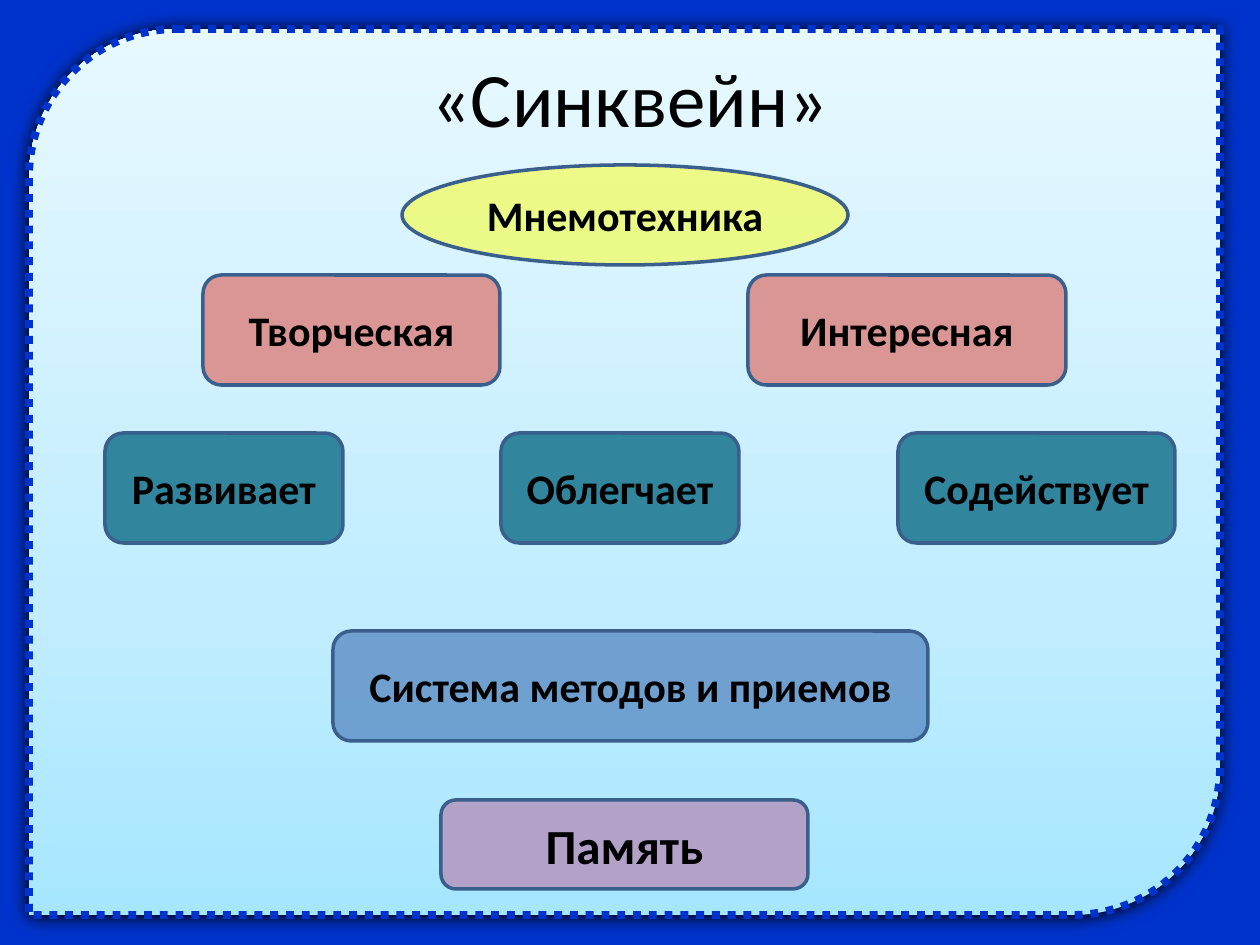
from copy import deepcopy
from dataclasses import dataclass

from lxml.etree import SubElement
from pptx import Presentation
from pptx.dml.color import RGBColor
from pptx.enum.dml import MSO_LINE
from pptx.enum.shapes import MSO_SHAPE
from pptx.enum.text import MSO_ANCHOR, PP_ALIGN
from pptx.oxml.ns import qn
from pptx.util import Emu, Pt

SCALE = 914400 / 126


@dataclass(frozen=True)
class Theme:
    font: str = "Calibri"
    ink: str = "000000"
    edge: str = "3A5F8C"
    back: str = "0033CC"
    glow: tuple = ((0, "A7E6FF"), (0.35, "C1EDFF"), (1, "E7F8FF"))
    topic: str = "FFFF00"
    trait: str = "D99694"
    verb: str = "31859C"
    phrase: str = "4F81BD"
    sum: str = "B3A2C7"
    title: int = 44
    large: int = 28
    body: int = 24


THEME = Theme()


@dataclass(frozen=True)
class Node:
    text: str
    left: int
    top: int
    width: int
    height: int
    fill: str
    size: int = THEME.body
    kind: MSO_SHAPE = MSO_SHAPE.ROUNDED_RECTANGLE
    alpha: int = 100


def row(top: int, fill: str, *items: tuple[str, int, int]) -> list[Node]:
    """Make nodes of one height and colour from (text, left, width)."""
    return [Node(text, left, top, width, 110, fill) for text, left, width in items]


NODES = [
    Node("Мнемотехника", 402, 165, 446, 100, THEME.topic, kind=MSO_SHAPE.OVAL, alpha=47),
    *row(275, THEME.trait, ("Творческая", 203, 297), ("Интересная", 748, 318)),
    *row(433, THEME.verb, ("Развивает", 105, 238), ("Облегчает", 501, 238),
         ("Содействует", 898, 277)),
    Node("Система методов и приемов", 333, 631, 595, 110, THEME.phrase, alpha=70),
    Node("Память", 441, 800, 367, 89, THEME.sum, size=THEME.large),
]


def px(num: int) -> Emu:
    return Emu(round(num * SCALE))


def rgb(code: str) -> RGBColor:
    return RGBColor.from_string(code)


def place(shape, left: int, top: int, width: int, height: int) -> None:
    shape.left, shape.top = px(left), px(top)
    shape.width, shape.height = px(width), px(height)


def write(shape, text: str, *, size: int, bold: bool = False) -> None:
    frame = shape.text_frame
    frame.word_wrap = True
    frame.vertical_anchor = MSO_ANCHOR.MIDDLE
    para = frame.paragraphs[0]
    para.alignment = PP_ALIGN.CENTER
    run = para.add_run()
    run.text = text
    font = run.font
    font.name, font.size, font.bold = THEME.font, Pt(size), bold
    font.color.rgb = rgb(THEME.ink)


def add_shape(slide, kind: MSO_SHAPE, box: tuple[int, int, int, int], edge: str, weight: float):
    shape = slide.shapes.add_shape(kind, *map(px, box))
    shape.shadow.inherit = False
    shape.line.color.rgb = rgb(edge)
    shape.line.width = Pt(weight)
    return shape


def add_frame(slide):
    """Draw the dotted panel with its gradient and soft shadow."""
    panel = add_shape(slide, MSO_SHAPE.ROUND_2_DIAG_RECTANGLE, (29, 29, 1191, 886),
                      THEME.back, 4.5)
    panel.line.dash_style = MSO_LINE.ROUND_DOT
    panel.fill.gradient()
    panel.fill.gradient_angle = 90
    props = panel._element.spPr
    stops = props.find(".//" + qn("a:gsLst"))
    stops.append(deepcopy(stops[0]))
    for stop, (pos, code) in zip(panel.fill.gradient_stops, THEME.glow):
        stop.position = pos
        stop.color.rgb = rgb(code)
    shade = SubElement(props.find(qn("a:effectLst")), qn("a:outerShdw"),
                       blurRad=str(Pt(8.5)), dist=str(Pt(1)), dir="5400000",
                       algn="ctr", rotWithShape="0")
    SubElement(shade, qn("a:srgbClr"), val=THEME.ink)
    return panel


def add_node(slide, node: Node) -> None:
    box = (node.left, node.top, node.width, node.height)
    shape = add_shape(slide, node.kind, box, THEME.edge, 2)
    shape.fill.solid()
    shape.fill.fore_color.rgb = rgb(node.fill)
    if node.alpha < 100:
        tint = shape._element.spPr.find(qn("a:solidFill"))[0]
        SubElement(tint, qn("a:alpha"), val=str(node.alpha * 1000))
    write(shape, node.text, size=node.size, bold=True)


def main() -> None:
    deck = Presentation()
    deck.slide_width, deck.slide_height = px(1260), px(945)
    slide = deck.slides.add_slide(deck.slide_layouts[5])
    slide.background.fill.solid()
    slide.background.fill.fore_color.rgb = rgb(THEME.back)
    panel = add_frame(slide)
    title = slide.shapes.title
    panel._element.addnext(title._element)
    place(title, 63, 38, 1134, 117)
    write(title, "«Синквейн»", size=THEME.title)
    for node in NODES:
        add_node(slide, node)
    deck.save("out.pptx")


if __name__ == "__main__":
    main()
